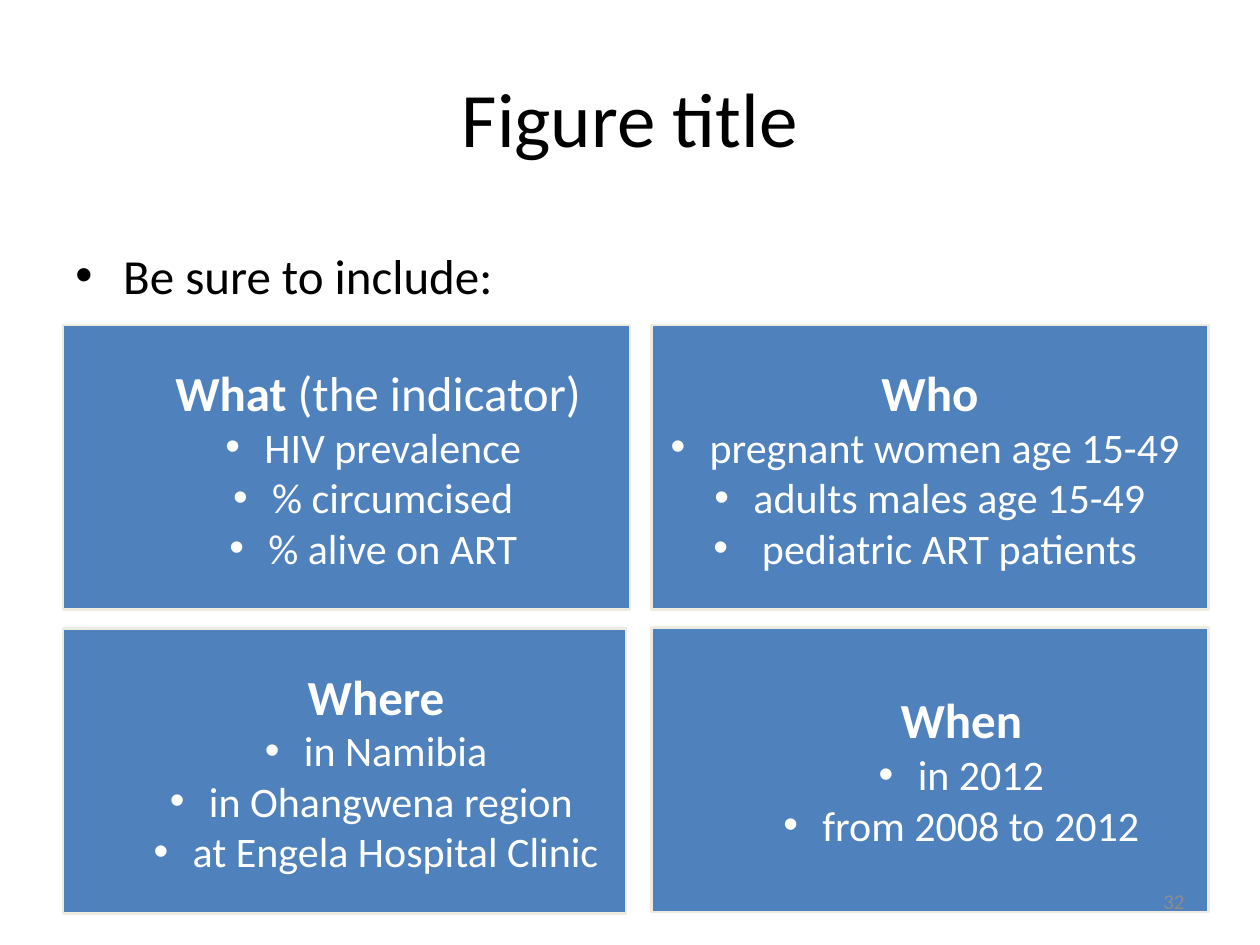
from dataclasses import dataclass

from lxml.etree import SubElement
from pptx import Presentation
from pptx.dml.color import RGBColor
from pptx.enum.shapes import MSO_SHAPE as Shape
from pptx.enum.text import MSO_ANCHOR as Anchor, PP_ALIGN as Align
from pptx.oxml.ns import qn
from pptx.util import Inches, Pt


@dataclass(frozen=True)
class Theme:
    font: str = "Calibri"
    black: str = "000000"
    white: str = "FFFFFF"
    grey: str = "8C8C8C"
    box_fill: str = "4F81BD"
    box_line: str = "EEECE1"
    title_size: int = 44
    heading_size: int = 28
    item_size: int = 24
    number_size: int = 12


THEME = Theme()
LEFT, RIGHT = 0.5, 5.17
TOP, BOTTOM = 2.58, 4.98
BOX_HEIGHT = 2.26
HANGING = 0.31

BOXES = [
    (LEFT, TOP, 4.5, 0.5, "What ", "(the indicator)",
     ["HIV prevalence ", "% circumcised ", "% alive on ART "]),
    (RIGHT, TOP, 4.42, 0, "Who", "",
     ["pregnant women age 15-49 ", "adults males age 15-49", " pediatric ART patients "]),
    (LEFT, BOTTOM + 0.01, 4.47, 0.5, "Where", "",
     ["in Namibia", "in Ohangwena region ", "at Engela Hospital Clinic"]),
    (RIGHT, BOTTOM, 4.42, 0.5, "When", "",
     ["in 2012", "from 2008 to 2012"]),
]


def add_run(paragraph, text, size, color, bold=False):
    run = paragraph.add_run()
    run.text = text
    run.font.name = THEME.font
    run.font.size = Pt(size)
    run.font.bold = bold
    run.font.color.rgb = RGBColor.from_string(color)


def set_indent(paragraph, margin, hanging=0):
    properties = paragraph._p.get_or_add_pPr()
    properties.set("marL", str(Inches(margin)))
    properties.set("indent", str(Inches(-hanging)))
    if hanging:
        SubElement(properties, qn("a:buFont")).set("typeface", "Arial")
        SubElement(properties, qn("a:buChar")).set("char", "•")


def add_title(slide, text):
    title = slide.shapes.title
    title.left, title.top = Inches(0.5), Inches(0.3)
    title.width, title.height = Inches(9), Inches(1.25)
    title.text_frame.vertical_anchor = Anchor.MIDDLE
    paragraph = title.text_frame.paragraphs[0]
    paragraph.alignment = Align.CENTER
    add_run(paragraph, text, THEME.title_size, THEME.black)


def add_text(slide, left, top, width, height, text, size, color):
    text_box = slide.shapes.add_textbox(
        Inches(left), Inches(top), Inches(width), Inches(height))
    text_box.text_frame.word_wrap = True
    paragraph = text_box.text_frame.paragraphs[0]
    add_run(paragraph, text, size, color)
    return text_box.text_frame, paragraph


def add_lead(slide, text):
    _, paragraph = add_text(slide, 0.5, 1.9, 9, 1.08, text,
                            THEME.heading_size, THEME.black)
    set_indent(paragraph, 0.38, 0.38)
    paragraph.space_before = Pt(0.2 * THEME.heading_size)


def add_slide_number(slide, text):
    frame, paragraph = add_text(slide, 7.17, 6.95, 2.33, 0.4, text,
                                THEME.number_size, THEME.grey)
    frame.vertical_anchor = Anchor.MIDDLE
    paragraph.alignment = Align.RIGHT


def add_box(slide, left, top, width, margin, heading, detail, items):
    box = slide.shapes.add_shape(
        Shape.RECTANGLE, Inches(left), Inches(top), Inches(width), Inches(BOX_HEIGHT))
    box.shadow.inherit = False
    box.fill.solid()
    box.fill.fore_color.rgb = RGBColor.from_string(THEME.box_fill)
    box.line.color.rgb = RGBColor.from_string(THEME.box_line)
    box.line.width = Pt(1.5)
    frame = box.text_frame
    frame.word_wrap = True
    frame.vertical_anchor = Anchor.MIDDLE
    paragraph = frame.paragraphs[0]
    paragraph.alignment = Align.CENTER
    set_indent(paragraph, margin)
    add_run(paragraph, heading, THEME.heading_size, THEME.white, bold=True)
    if detail:
        add_run(paragraph, detail, THEME.heading_size, THEME.white)
    for item in items:
        paragraph = frame.add_paragraph()
        paragraph.alignment = Align.CENTER
        set_indent(paragraph, margin + HANGING, HANGING)
        add_run(paragraph, item, THEME.item_size, THEME.white)


def main():
    presentation = Presentation()
    presentation.slide_width = Inches(10)
    presentation.slide_height = Inches(7.5)
    slide = presentation.slides.add_slide(presentation.slide_layouts[5])
    add_title(slide, "Figure title")
    add_lead(slide, "Be sure to include:")
    for box in BOXES:
        add_box(slide, *box)
    add_slide_number(slide, "32")
    presentation.save("out.pptx")


if __name__ == "__main__":
    main()
